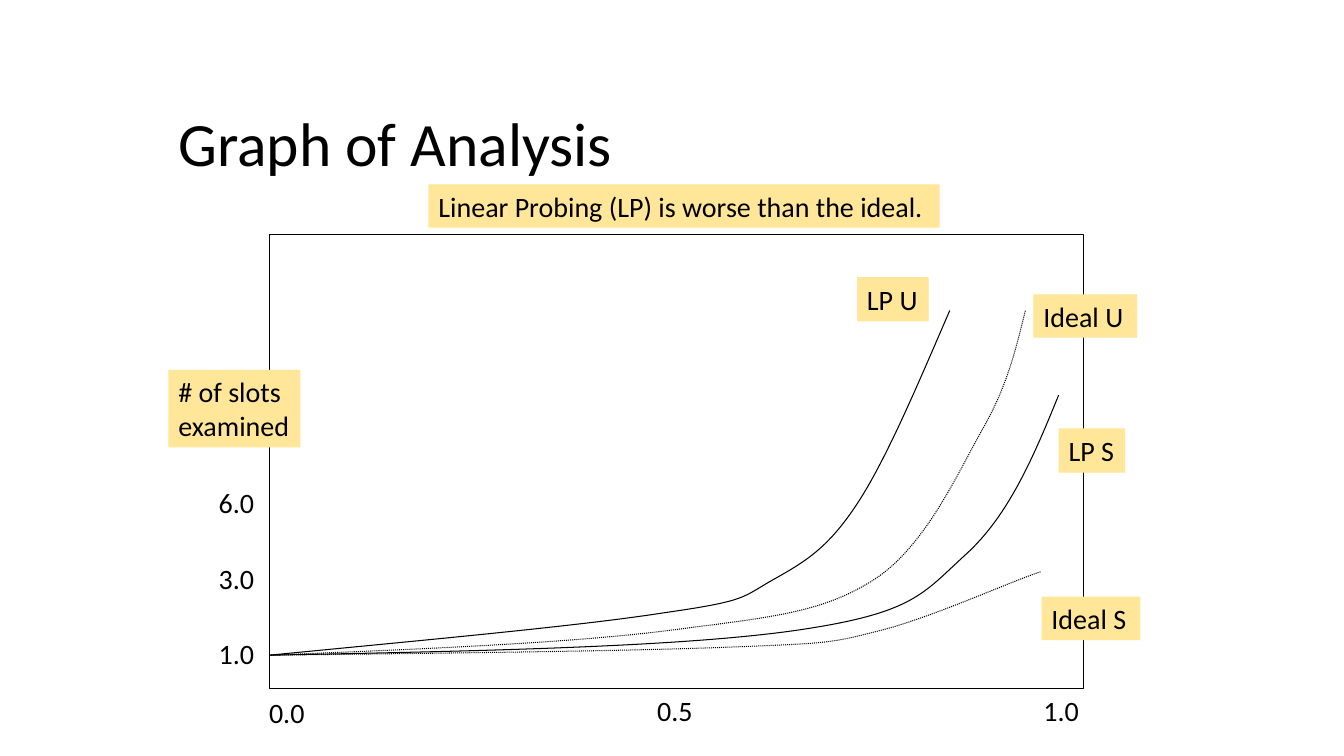
from dataclasses import dataclass

from lxml import etree
from pptx import Presentation
from pptx.dml.color import RGBColor
from pptx.enum.dml import MSO_LINE
from pptx.enum.shapes import MSO_SHAPE
from pptx.enum.text import MSO_ANCHOR
from pptx.oxml.ns import qn
from pptx.util import Pt

EMU_PER_PX = 9144  # 100 px to the inch
RECTANGLE = MSO_SHAPE.RECTANGLE
TOP, MIDDLE = MSO_ANCHOR.TOP, MSO_ANCHOR.MIDDLE
DOTTED = MSO_LINE.ROUND_DOT


@dataclass(frozen=True)
class Theme:
    font: str = "Calibri"
    ink: RGBColor = RGBColor(0x00, 0x00, 0x00)
    tag_fill: RGBColor = RGBColor(0xFF, 0xE6, 0x99)
    title_size: Pt = Pt(44)
    label_size: Pt = Pt(20)
    line_width: Pt = Pt(0.75)


THEME = Theme()

# Boxes are left, top, width, height in px.
TITLE_BOX = (167, 83, 850, 125)
PLOT_BOX = (267, 233, 808, 450)

# Everything below is relative to the corner of the plot.
TICK_SIZE = (56, 44)
X_TICKS = [("0.0", -10, 452), ("0.5", 375, 450), ("1.0", 758, 450)]
Y_TICKS = ["1.0", "3.0", "6.0"]
Y_TICK_LEFT, Y_TICK_TOP, Y_TICK_STEP = -60, 394, 75

TAGS = [
    ("Ideal U", (758, 59, 103, 43)),
    ("Ideal S", (766, 359, 98, 43)),
    ("LP S", (783, 192, 66, 44)),
    ("LP U", (583, 42, 71, 44)),
    ("Linear Probing (LP) is worse than the ideal.", (158, -50, 507, 43)),
    ("# of slots\nexamined", (-100, 134, 131, 77)),
]

CURVE_START = (0, 417)
IDEAL_UNSUCCESSFUL = [
    (150, 411), (300, 405), (400, 392),
    (500, 379), (548, 375), (600, 342),
    (651, 309), (683, 236), (708, 192),
    (733, 148), (741, 111), (750, 75),
]
IDEAL_SUCCESSFUL = [
    (178, 415), (357, 413), (458, 409),
    (559, 405), (557, 405), (608, 392),
    (659, 379), (740, 342), (766, 334),
]
PROBING_UNSUCCESSFUL = [
    (154, 402), (308, 388), (391, 375),
    (475, 363), (468, 360), (500, 342),
    (532, 324), (554, 311), (583, 267),
    (612, 223), (643, 149), (675, 75),
]
PROBING_SUCCESSFUL = [
    (205, 413), (409, 409), (525, 392),
    (640, 375), (648, 356), (691, 317),
    (734, 278), (759, 218), (783, 159),
]
CURVES = [
    (IDEAL_UNSUCCESSFUL, DOTTED),
    (IDEAL_SUCCESSFUL, DOTTED),
    (PROBING_UNSUCCESSFUL, None),
    (PROBING_SUCCESSFUL, None),
]


def set_attributes(target, values):
    for name, value in values.items():
        setattr(target, name, value)


def px(*lengths):
    return [length * EMU_PER_PX for length in lengths]


def add_text(slide, box, text, size, anchor=TOP, line_spacing=1.0, fill=None):
    shape = slide.shapes.add_textbox(*px(*box))
    if fill is not None:
        shape.fill.solid()
        shape.fill.fore_color.rgb = fill
    frame = shape.text_frame
    frame.text = text
    set_attributes(frame, {"word_wrap": True, "margin_right": 0, "vertical_anchor": anchor})
    for paragraph in frame.paragraphs:
        paragraph.line_spacing = line_spacing
        set_attributes(paragraph.font, {"name": THEME.font, "size": size})
        paragraph.font.color.rgb = THEME.ink


def style_outline(shape, dash=None):
    shape.shadow.inherit = False
    shape.fill.background()
    shape.line.color.rgb = THEME.ink
    set_attributes(shape.line, {"width": THEME.line_width, "dash_style": dash})


def add_curve(slide, origin, controls, dash):
    """Draw Bézier segments: each three points are two handles and an end."""
    left, top = origin
    points = [(left + x, top + y) for x, y in [CURVE_START, *controls]]
    builder = slide.shapes.build_freeform(*points[0], scale=EMU_PER_PX)
    builder.add_line_segments(points[1:], close=False)
    shape = builder.convert_to_shape()
    lines = list(shape._element.iter(qn("a:lnTo")))
    for start in range(0, len(lines), 3):
        bezier = etree.Element(qn("a:cubicBezTo"))
        lines[start].addprevious(bezier)
        for line in lines[start:start + 3]:
            bezier.append(line[0])
            line.getparent().remove(line)
    style_outline(shape, dash)


def add_ticks(slide, origin):
    left, top = origin
    y_ticks = [
        (text, Y_TICK_LEFT, Y_TICK_TOP - row * Y_TICK_STEP)
        for row, text in enumerate(Y_TICKS)
    ]
    for text, x, y in X_TICKS + y_ticks:
        add_text(slide, (left + x, top + y, *TICK_SIZE), text, THEME.label_size)


def add_tags(slide, origin):
    left, top = origin
    for text, (x, y, width, height) in TAGS:
        add_text(slide, (left + x, top + y, width, height), text,
                 THEME.label_size, fill=THEME.tag_fill)


def add_graph(slide, box):
    origin = box[:2]
    style_outline(slide.shapes.add_shape(RECTANGLE, *px(*box)))
    add_ticks(slide, origin)
    for controls, dash in CURVES:
        add_curve(slide, origin, controls, dash)
    add_tags(slide, origin)


def main():
    presentation = Presentation()
    width, height = px(1333, 750)
    set_attributes(presentation, {"slide_width": width, "slide_height": height})
    slide = presentation.slides.add_slide(presentation.slide_layouts[6])
    add_text(slide, TITLE_BOX, "Graph of Analysis", THEME.title_size,
             anchor=MIDDLE, line_spacing=0.9)
    add_graph(slide, PLOT_BOX)
    presentation.save("out.pptx")


if __name__ == "__main__":
    main()
